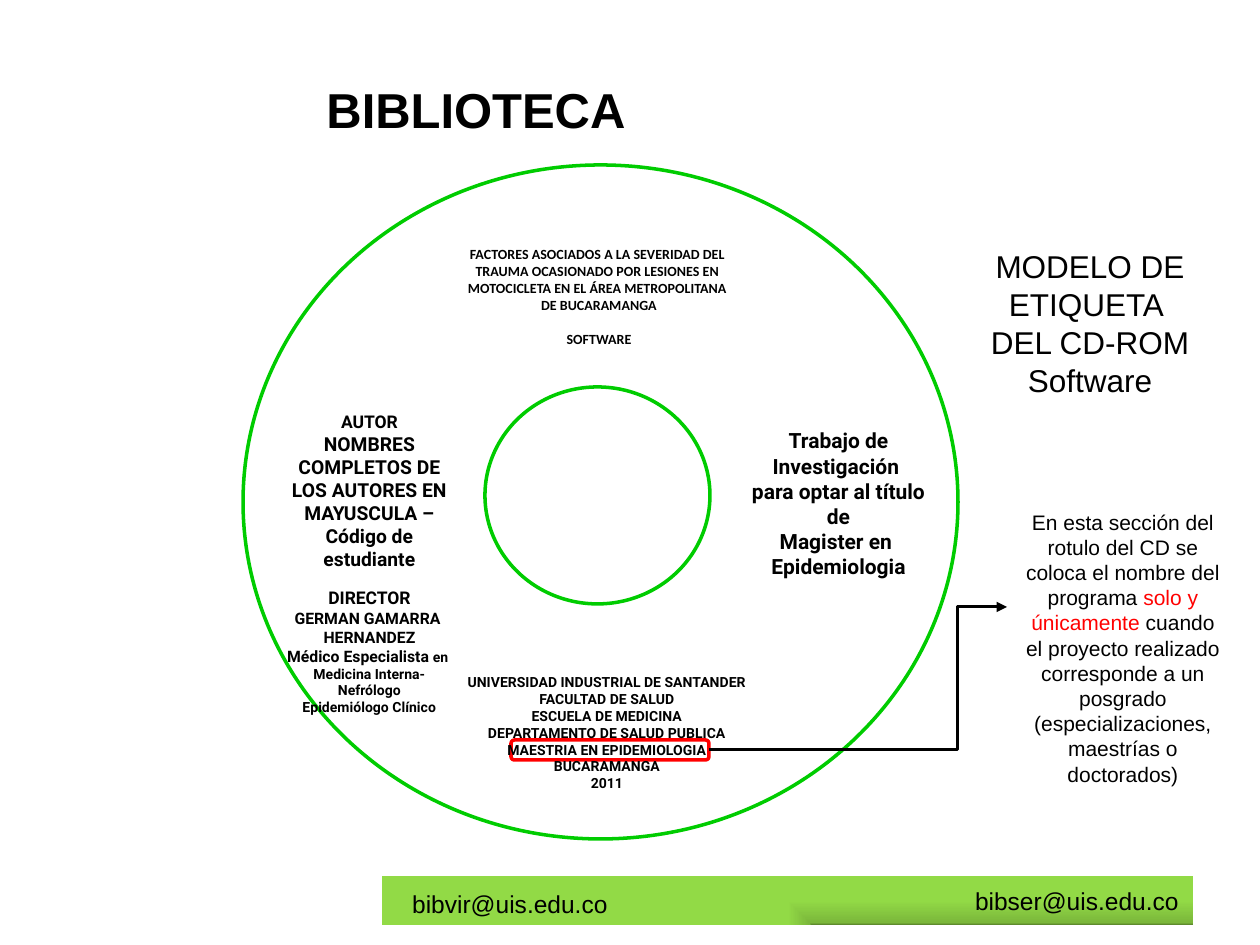
"""Builds the slide with the library's label model for a software CD-ROM."""
from lxml import etree
from pptx import Presentation
from pptx.dml.color import RGBColor
from pptx.enum.shapes import MSO_CONNECTOR, MSO_SHAPE
from pptx.enum.text import PP_ALIGN
from pptx.oxml import parse_xml
from pptx.oxml.ns import nsdecls, qn
from pptx.util import Emu, Pt

OVAL, ROUND, RECT = MSO_SHAPE.OVAL, MSO_SHAPE.ROUNDED_RECTANGLE, MSO_SHAPE.RECTANGLE
ELBOW, CENTER = MSO_CONNECTOR.ELBOW, PP_ALIGN.CENTER
THEME = {
    "ink": RGBColor(0, 0, 0),
    "ring": RGBColor(0, 0xCC, 0),
    "red": RGBColor(0xFF, 0, 0),
    "bar": ((0, "57812A"), (9000, "7BB73B"), (100000, "92DA46")),
    "title": 28, "model": 18, "mail": 14, "note": 12, "degree": 12,
    "name": 11, "head": 10, "staff": 9, "small": 8,
}
SMALL, STAFF, HEAD = THEME["small"], THEME["staff"], THEME["head"]


def px(*sizes):
    return [Emu(round(size * 914400 / 126)) for size in sizes]


def write(box, lines, font, size, bold=False, inset=None, wrap=True):
    frame = slide.shapes.add_textbox(*px(*box)).text_frame
    frame.word_wrap = wrap
    if inset is not None:
        frame.margin_left = frame.margin_right = px(inset)[0]
        frame.margin_top = frame.margin_bottom = px(inset)[0]
    for i, line in enumerate(lines):
        text, points, gap = line if isinstance(line, tuple) else (line, size, 0)
        para = frame.paragraphs[0] if i == 0 else frame.add_paragraph()
        para.alignment = CENTER
        if gap:
            para.space_before = Pt(gap)
        para.font.name, para.font.size = font, Pt(points)
        para.font.bold, para.font.color.rgb = bold, THEME["ink"]
        para.add_run().text = text
    return frame


deck = Presentation()
deck.slide_width, deck.slide_height = px(1260, 945)
slide = deck.slides.add_slide(deck.slide_layouts[6])

bar = slide.shapes.add_shape(RECT, *px(382, 876, 811, 49))
bar.shadow.inherit = False
bar.line.fill.background()
bar.fill.gradient()
grad = bar.fill._xPr.find(qn("a:gradFill"))
stops = "".join(
    f'<a:gs pos="{pos}"><a:srgbClr val="{color}"/></a:gs>' for pos, color in THEME["bar"]
)
grad.getparent().replace(grad, parse_xml(
    f'<a:gradFill {nsdecls("a")}><a:gsLst>{stops}</a:gsLst><a:path path="rect">'
    '<a:fillToRect l="100000" t="100000"/></a:path>'
    '<a:tileRect r="-100000" b="-100000"/></a:gradFill>'
))

write((312, 73, 328, 72), ["BIBLIOTECA"], "Arial", THEME["title"], True, wrap=False)
write((399, 883, 222, 43), ["bibvir@uis.edu.co"], "Arial", THEME["mail"], wrap=False)
write((958, 880, 238, 43), ["bibser@uis.edu.co"], "Arial", THEME["mail"], wrap=False)

for kind, box, color in (
    (OVAL, (243, 165, 715, 674), "ring"),
    (OVAL, (485, 387, 225, 217), "ring"),
    (ROUND, (511, 740, 198, 20), "red"),
):
    shape = slide.shapes.add_shape(kind, *px(*box))
    shape.shadow.inherit = False
    shape.fill.background()
    shape.line.color.rgb = THEME[color]
    shape.line.width = Pt(2)

write((418, 669, 378, 140), [
    "UNIVERSIDAD INDUSTRIAL DE SANTANDER",
    "FACULTAD DE SALUD",
    "ESCUELA DE MEDICINA",
    "DEPARTAMENTO DE SALUD PUBLICA",
    "MAESTRIA EN EPIDEMIOLOGIA",
    "BUCARAMANGA",
    "2011",
], "Roboto", SMALL, True, 5)
write((414, 241, 370, 110), [
    "FACTORES ASOCIADOS A LA SEVERIDAD DEL ",
    "TRAUMA OCASIONADO POR LESIONES EN ",
    "MOTOCICLETA EN EL ÁREA METROPOLITANA ",
    "DE BUCARAMANGA",
    ("SOFTWARE", SMALL, 9.75),
], "Calibri", SMALL, True, 5)
write((736, 423, 205, 160), [
    "Trabajo de Investigación ",
    "para optar al título de",
    "Magister en ",
    "Epidemiologia",
], "Roboto", THEME["degree"], True, 5)
people = write((280, 406, 179, 197), [
    ("AUTOR", HEAD, 0),
    "NOMBRES COMPLETOS DE LOS AUTORES EN MAYUSCULA – Código de estudiante",
    ("DIRECTOR", HEAD, 9.5),
    ("GERMAN GAMARRA ", STAFF, 0),
    ("HERNANDEZ", STAFF, 0),
    ("Médico Especialista ", STAFF, 0),
    ("Medicina Interna- Nefrólogo", SMALL, 0),
    ("Epidemiólogo Clínico", SMALL, 0),
], "Roboto", THEME["name"], True, 5)
tail = people.paragraphs[5].add_run()
tail.text = "en "
tail.font.size = Pt(SMALL)

write((968, 241, 244, 165), [
    "MODELO DE ETIQUETA ", "DEL CD-ROM", "Software",
], "Arial", THEME["model"])
note = write((1010, 503, 226, 292), [
    "En esta sección del rotulo del CD se coloca el nombre del programa ",
], "Arial", THEME["note"]).paragraphs[0]
accent = note.add_run()
accent.text = "solo y únicamente"
accent.font.color.rgb = THEME["red"]
note.add_run().text = (
    " cuando el proyecto realizado corresponde a un posgrado "
    "(especializaciones, maestrías o doctorados)"
)

arrow = slide.shapes.add_connector(ELBOW, *px(709, 750, 1007, 607))
arrow.line.color.rgb = THEME["ink"]
arrow.line.width = Pt(1.75)
props = arrow._element.spPr
guides = props.find(qn("a:prstGeom")).get_or_add_avLst()
etree.SubElement(guides, qn("a:gd"), name="adj1", fmla="val 83300")
etree.SubElement(props.find(qn("a:ln")), qn("a:tailEnd"), type="triangle")
etree.SubElement(props, qn("a:effectLst"))

deck.save("out.pptx")
